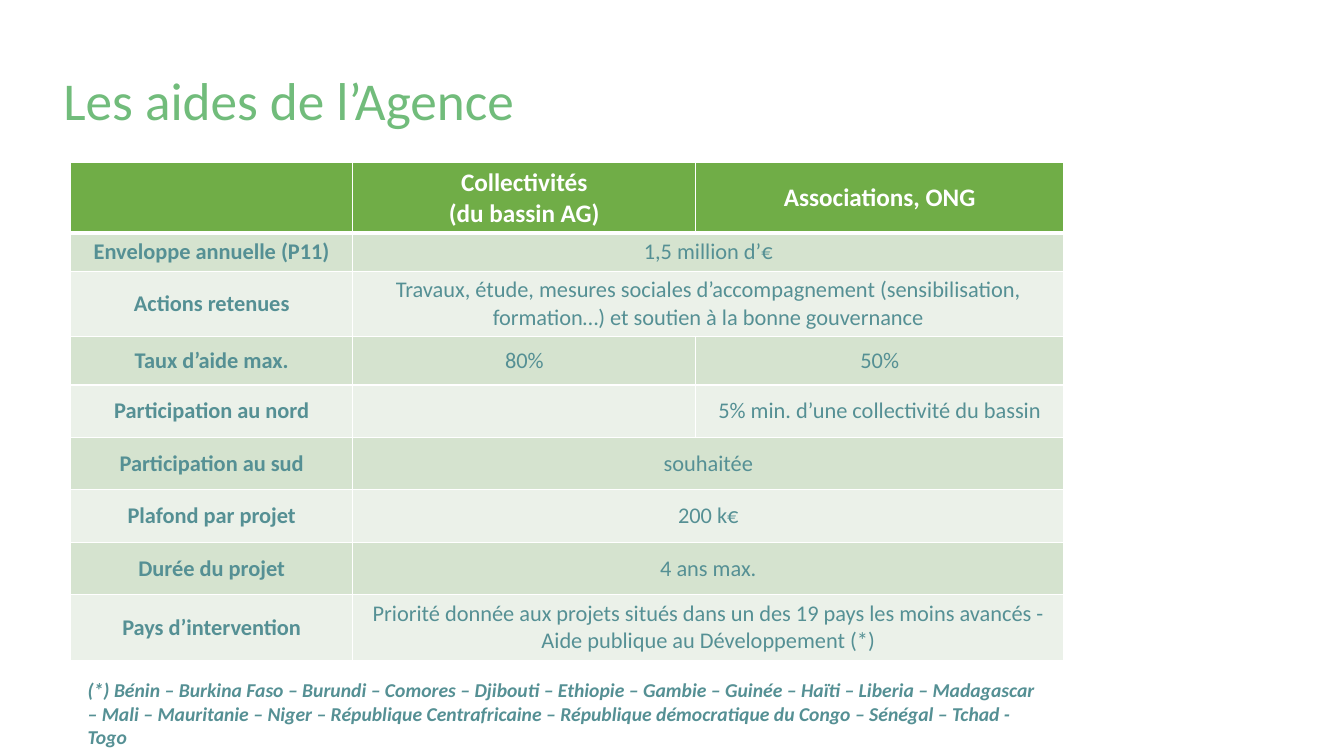
from dataclasses import dataclass

from lxml.etree import SubElement
from pptx import Presentation
from pptx.dml.color import RGBColor
from pptx.enum.text import MSO_ANCHOR, PP_ALIGN
from pptx.oxml.ns import qn
from pptx.util import Inches, Pt


@dataclass(frozen=True)
class Theme:
    font: str = "Calibri"
    title: str = "71BC7B"
    text: str = "559094"
    white: str = "FFFFFF"
    header: str = "70AD47"
    bands: tuple = ("D5E3CF", "EBF1E9")
    title_size: int = 38
    header_size: int = 18
    body_size: int = 16
    note_size: int = 14


COLS = [2.8, 3.4, 3.65]
ROW_HEIGHTS = [0.7, 0.38, 0.65, 0.48] + [0.52] * 4 + [0.65]
# A row with two entries has its second one spread over both right-hand columns.
ROWS = [
    ["", "Collectivités\n(du bassin AG)", "Associations, ONG"],
    ["Enveloppe annuelle (P11)", "1,5 million d’€"],
    ["Actions retenues",
     "Travaux, étude, mesures sociales d’accompagnement (sensibilisation, "
     "formation…) et soutien à la bonne gouvernance"],
    ["Taux d’aide max.", "80%", "50%"],
    ["Participation au nord", "", "5% min. d’une collectivité du bassin"],
    ["Participation au sud", "souhaitée"],
    ["Plafond par projet", "200 k€"],
    ["Durée du projet", "4 ans max."],
    ["Pays d’intervention",
     "Priorité donnée aux projets situés dans un des 19 pays les moins avancés - "
     "Aide publique au Développement (*)"],
]
COUNTRIES = (
    "(*) Bénin – Burkina Faso – Burundi – Comores – Djibouti – Ethiopie – Gambie – "
    "Guinée – Haïti – Liberia – Madagascar – Mali – Mauritanie – Niger – République "
    "Centrafricaine – République démocratique du Congo – Sénégal – Tchad - Togo"
)


class SlideBuilder:
    def __init__(self, slide, theme):
        self.slide = slide
        self.theme = theme

    def fill_text(self, tf, text, size, color, bold=False, italic=False,
                  align=PP_ALIGN.LEFT, spacing=None, indent=0):
        """Fill a text frame, one paragraph per line of text."""
        tf.word_wrap = True
        for i, line in enumerate(text.split("\n")):
            p = tf.add_paragraph() if i else tf.paragraphs[0]
            p.alignment = align
            if spacing:
                p.line_spacing = spacing
            if indent:
                p._p.get_or_add_pPr().set("marL", str(Inches(indent)))
            p.font.size = Pt(size)
            if not line:
                continue
            r = p.add_run()
            r.text = line
            r.font.name = self.theme.font
            r.font.size = Pt(size)
            r.font.bold = bold
            r.font.italic = italic
            r.font.color.rgb = RGBColor.from_string(color)

    def text(self, box, text, anchor=MSO_ANCHOR.TOP, **fmt):
        sp = self.slide.shapes.add_textbox(*map(Inches, box))
        sp.text_frame.vertical_anchor = anchor
        self.fill_text(sp.text_frame, text, **fmt)

    def borders(self, cell, **widths):
        """Draw white cell borders, with widths in points by side: L, R, T, B."""
        tcPr = cell._tc.get_or_add_tcPr()
        for side, width in widths.items():
            ln = SubElement(tcPr, qn(f"a:ln{side}"), w=str(Pt(width)))
            fill = SubElement(ln, qn("a:solidFill"))
            SubElement(fill, qn("a:srgbClr"), val=self.theme.white)

    def cell(self, cell, text, row, col):
        th = self.theme
        header = row == 0
        self.borders(cell, L=1, R=1, T=3 if row == 1 else 1, B=3 if header else 1)
        cell.fill.solid()
        fill = th.header if header else th.bands[(row - 1) % 2]
        cell.fill.fore_color.rgb = RGBColor.from_string(fill)
        cell.vertical_anchor = MSO_ANCHOR.MIDDLE
        self.fill_text(cell.text_frame, text,
                       size=th.header_size if header else th.body_size,
                       color=th.white if header else th.text,
                       bold=header or col == 0, align=PP_ALIGN.CENTER)

    def table(self, left, top, cols, heights, rows):
        box = (left, top, sum(cols), sum(heights))
        tbl = self.slide.shapes.add_table(
            len(rows), len(cols), *map(Inches, box)).table
        for column, width in zip(tbl.columns, cols):
            column.width = Inches(width)
        for i, (height, texts) in enumerate(zip(heights, rows)):
            tbl.rows[i].height = Inches(height)
            if len(texts) < len(cols):
                tbl.cell(i, 1).merge(tbl.cell(i, 2))
            for j in range(len(cols)):
                self.cell(tbl.cell(i, j), texts[j] if j < len(texts) else "", i, j)


def main():
    prs = Presentation()
    prs.slide_width, prs.slide_height = Inches(13.33), Inches(7.5)
    th = Theme()
    sb = SlideBuilder(prs.slides.add_slide(prs.slide_layouts[6]), th)
    sb.text((0.53, 0.53, 10.49, 1), "Les aides de l’Agence", MSO_ANCHOR.MIDDLE,
            size=th.title_size, color=th.title, spacing=0.9)
    sb.table(0.7, 1.61, COLS, ROW_HEIGHTS, ROWS)
    sb.text((0.27, 6.68, 10.22, 0.57), COUNTRIES, size=th.note_size,
            color=th.text, bold=True, italic=True, indent=0.5)
    prs.save("out.pptx")


if __name__ == "__main__":
    main()
